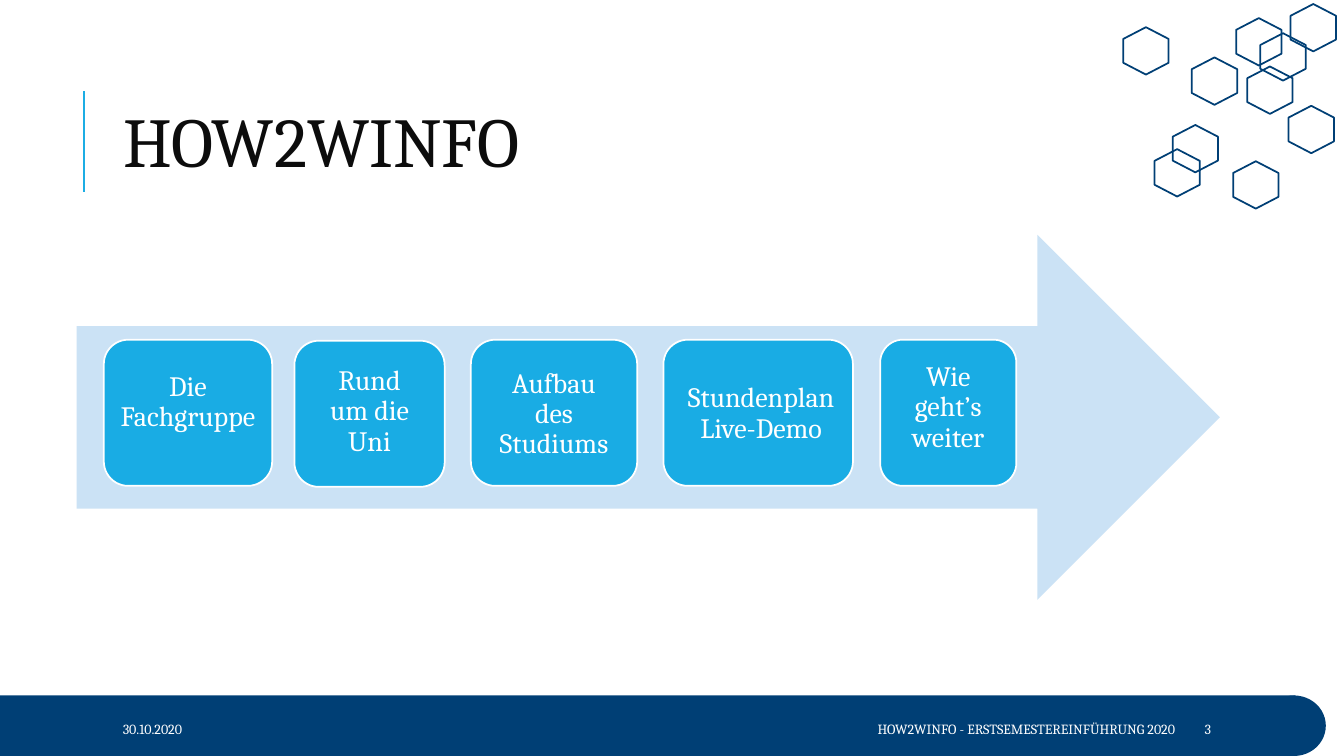
from dataclasses import dataclass
from pptx import Presentation
from pptx.dml.color import RGBColor
from pptx.enum.shapes import MSO_CONNECTOR, MSO_SHAPE
from pptx.enum.text import MSO_ANCHOR, PP_ALIGN
from pptx.oxml.ns import qn
from pptx.util import Inches, Pt

RECT, OVAL, HEX = MSO_SHAPE.RECTANGLE, MSO_SHAPE.OVAL, MSO_SHAPE.HEXAGON
ARROW, ROUND = MSO_SHAPE.RIGHT_ARROW, MSO_SHAPE.ROUNDED_RECTANGLE
LINE = MSO_CONNECTOR.STRAIGHT
LEFT, MID, RIGHT = PP_ALIGN.LEFT, PP_ALIGN.CENTER, PP_ALIGN.RIGHT
CENTER = MSO_ANCHOR.MIDDLE


@dataclass(frozen=True)
class Theme:
    font: str = "Cambria"
    navy: str = "003F75"
    sky: str = "1CADE4"
    step: str = "19ACE4"
    pale: str = "CBE2F5"
    ink: str = "0C0C0C"
    white: str = "FFFFFF"
    head: int = 50
    body: int = 20
    small: int = 10


class Deck:
    def __init__(self, theme):
        self.theme = theme
        self.deck = Presentation()
        self.deck.slide_width = Inches(13.33)
        self.deck.slide_height = Inches(7.5)
        self.slide = self.deck.slides.add_slide(self.deck.slide_layouts[5])

    def apply(self, item, style):
        for name, value in style.items():
            setattr(item, name, value)

    def words(self, shape, text, size, color, align=LEFT, space=1.0,
              pads=(0.1, 0.05, 0.1, 0.05)):
        frame = shape.text_frame
        left, top, right, low = map(Inches, pads)
        self.apply(frame, {
            "text": text, "word_wrap": True, "vertical_anchor": CENTER,
            "margin_left": left, "margin_top": top,
            "margin_right": right, "margin_bottom": low})
        para = frame.paragraphs[0]
        self.apply(para, {"alignment": align, "line_spacing": space})
        font = para.runs[0].font
        self.apply(font, {"name": self.theme.font, "size": Pt(size)})
        font.color.rgb = RGBColor.from_string(color)

    def title(self, text, box):
        shape = self.slide.shapes.title
        names = ("left", "top", "width", "height")
        self.apply(shape, dict(zip(names, map(Inches, box))))
        self.words(shape, text, self.theme.head, self.theme.ink, space=0.8)

    def label(self, text, box, align=LEFT):
        shape = self.slide.shapes.add_textbox(*map(Inches, box))
        self.words(shape, text, self.theme.small, self.theme.white, align)

    def shape(self, kind, box, fill=None, line=None, adjust=None, turn=0):
        shape = self.slide.shapes.add_shape(kind, *map(Inches, box))
        shape.shadow.inherit = False
        shape.rotation = turn
        if adjust is not None:
            shape.adjustments[0] = adjust
        if fill:
            shape.fill.solid()
            shape.fill.fore_color.rgb = RGBColor.from_string(fill)
        else:
            shape.fill.background()
        if line:
            shape.line.color.rgb = RGBColor.from_string(line)
            shape.line.width = Pt(1.25)
        else:
            shape.line.fill.background()
        return shape

    def rule(self, ends, color, width):
        line = self.slide.shapes.add_connector(LINE, *map(Inches, ends))
        line.line.color.rgb = RGBColor.from_string(color)
        line.line.width = Pt(width)
        props = line._element.spPr
        props.append(props.makeelement(qn("a:effectLst"), {}))

    def step(self, text, box, pads):
        shape = self.shape(ROUND, box, self.theme.step, self.theme.white, 0.167)
        self.words(shape, text, self.theme.body, self.theme.white, MID, 0.9, pads)


HEXES = [
    (12.79, 0.05), (12.25, 0.19), (11.81, 0.58), (12.49, 0.34), (11.13, 0.28),
    (12.36, 0.67), (11.44, 1.49), (11.62, 1.25), (12.77, 1.06), (12.22, 1.61),
]
STEPS = [
    ("Die Fachgruppe", 1.03, 3.37, 1.67, (0.08, 0, 0.08, 0.2)),
    ("Rund um die Uni", 2.92, 3.38, 1.49, (0.22, 0, 0.22, 0.04)),
    ("Aufbau des Studiums", 4.67, 3.37, 1.65, (0.15, 0.03, 0.15, 0)),
    ("Stundenplan Live-Demo", 6.58, 3.37, 1.88, (0.13, 0.02, 0.07, 0)),
    ("Wie geht’s weiter", 8.73, 3.37, 1.35, (0.15, 0, 0.15, 0.1)),
]


def main():
    theme = Theme()
    deck = Deck(theme)
    deck.rule((0.83, 1.9, 0.83, 0.9), theme.sky, 1.5)
    deck.shape(RECT, (0, 6.9, 12.85, 0.6), theme.navy)
    deck.shape(OVAL, (12.52, 6.9, 0.63, 0.6), theme.navy)
    for left, top in HEXES:
        deck.shape(HEX, (left, top, 0.47, 0.45), line=theme.navy,
                   adjust=0.259, turn=90)
    deck.title("HOW2WINFO", (1.12, 0.64, 10.63, 1.64))
    deck.label("30.10.2020", (1.12, 7.08, 2.36, 0.3))
    deck.label("HOW2WINFO - ERSTSEMESTEREINFÜHRUNG 2020",
               (5.3, 7.08, 6.45, 0.3), RIGHT)
    deck.label("3", (11.85, 7.08, 1.06, 0.3))
    deck.shape(ARROW, (0.76, 2.33, 11.34, 3.62), theme.pale)
    for text, left, top, width, pads in STEPS:
        deck.step(text, (left, top, width, 1.45), pads)
    deck.deck.save("out.pptx")


if __name__ == "__main__":
    main()
